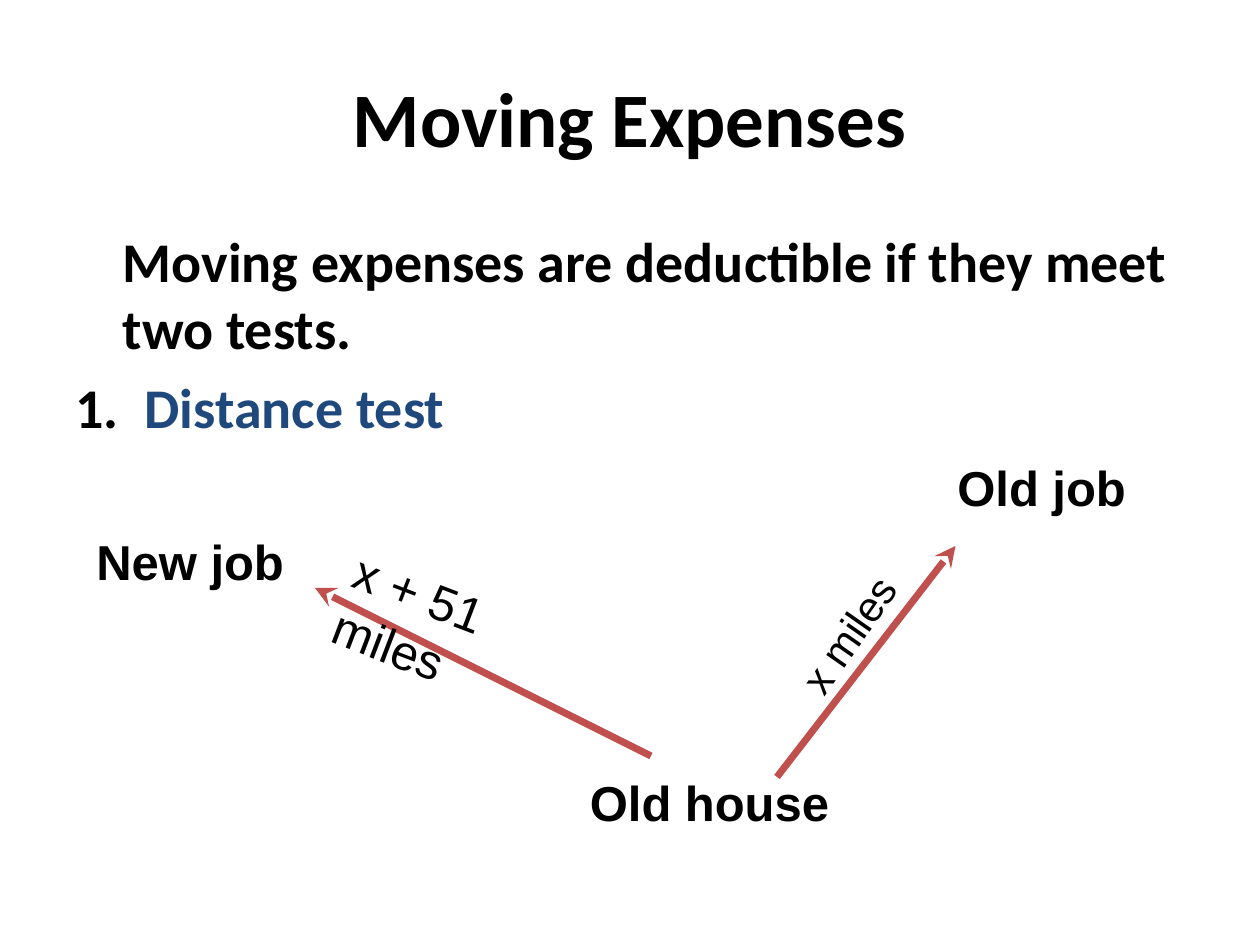
from dataclasses import dataclass

from lxml import etree
from pptx import Presentation
from pptx.dml.color import RGBColor
from pptx.enum.shapes import MSO_CONNECTOR
from pptx.enum.text import MSO_ANCHOR, MSO_AUTO_SIZE, PP_ALIGN
from pptx.oxml.ns import qn
from pptx.util import Pt

STRAIGHT = MSO_CONNECTOR.STRAIGHT
MIDDLE = MSO_ANCHOR.MIDDLE
CENTER = PP_ALIGN.CENTER
FIT_SHAPE = MSO_AUTO_SIZE.SHAPE_TO_FIT_TEXT


@dataclass(frozen=True)
class Theme:
    ink: RGBColor = RGBColor(0x00, 0x00, 0x00)
    accent: RGBColor = RGBColor(0x1F, 0x49, 0x7D)
    arrow: RGBColor = RGBColor(0xC0, 0x50, 0x4D)
    text_font: str = "Calibri"
    label_font: str = "Arial"
    title_size: int = 44
    body_size: int = 32
    label_size: int = 28
    small_size: int = 24


theme = Theme()
presentation = Presentation()
presentation.slide_width = Pt(720)
presentation.slide_height = Pt(540)
slide = presentation.slides.add_slide(presentation.slide_layouts[6])


def add_frame(left, top, width, height, rotation=0, wrap=True):
    """Add a text box and return its text frame."""
    box = slide.shapes.add_textbox(Pt(left), Pt(top), Pt(width), Pt(height))
    box.rotation = rotation
    box.text_frame.word_wrap = wrap
    return box.text_frame


def write(paragraph, text, *, size, font=theme.text_font, color=theme.ink, bold=True):
    run = paragraph.add_run()
    run.text = text
    run.font.size = Pt(size)
    run.font.name = font
    run.font.color.rgb = color
    run.font.bold = bold


# Title
title = add_frame(36, 21.6, 648, 90)
title.vertical_anchor = MIDDLE
title.paragraphs[0].alignment = CENTER
write(title.paragraphs[0], "Moving Expenses", size=theme.title_size)

# Rule and first test
body = add_frame(36, 126, 648, 356.4)
rule = body.paragraphs[0]
distance_test = body.add_paragraph()
for paragraph, margin, indent in ((rule, 27, 0), (distance_test, 39.6, -39.6)):
    paragraph.space_before = Pt(6.4)
    properties = paragraph._p.get_or_add_pPr()
    properties.set("marL", str(Pt(margin)))
    properties.set("indent", str(Pt(indent)))
write(rule, "Moving expenses are deductible if they meet two tests.", size=theme.body_size)
write(distance_test, "1.\t", size=theme.body_size)
write(distance_test, "Distance test", size=theme.body_size, color=theme.accent)

# Routes from the old house to each job
for start, end in (((372, 432), (180, 336)), ((444, 444), (546, 312))):
    route = slide.shapes.add_connector(STRAIGHT, *(Pt(v) for v in start + end))
    route.line.color.rgb = theme.arrow
    route.line.width = Pt(4)
    etree.SubElement(route.line._get_or_add_ln(), qn("a:tailEnd"), type="stealth")
    etree.SubElement(route._element.spPr, qn("a:effectLst"))

# Places and distances: text, box, rotation, size, bold, wrap
labels = (
    ("Old house", (330, 438, 152.6, 41), 0, theme.label_size, True, False),
    ("Old job", (540, 258, 120, 41), 0, theme.label_size, True, True),
    ("New job", (48, 300, 139, 41), 0, theme.label_size, True, True),
    ("x + 51 miles", (192, 330, 156, 41), 21, theme.label_size, False, True),
    ("x miles", (436.3, 337, 106.6, 36), 305, theme.small_size, False, True),
)
for text, box, rotation, size, bold, wrap in labels:
    label = add_frame(*box, rotation=rotation, wrap=wrap)
    label.auto_size = FIT_SHAPE
    write(label.paragraphs[0], text, size=size, font=theme.label_font, bold=bold)

presentation.save("out.pptx")
